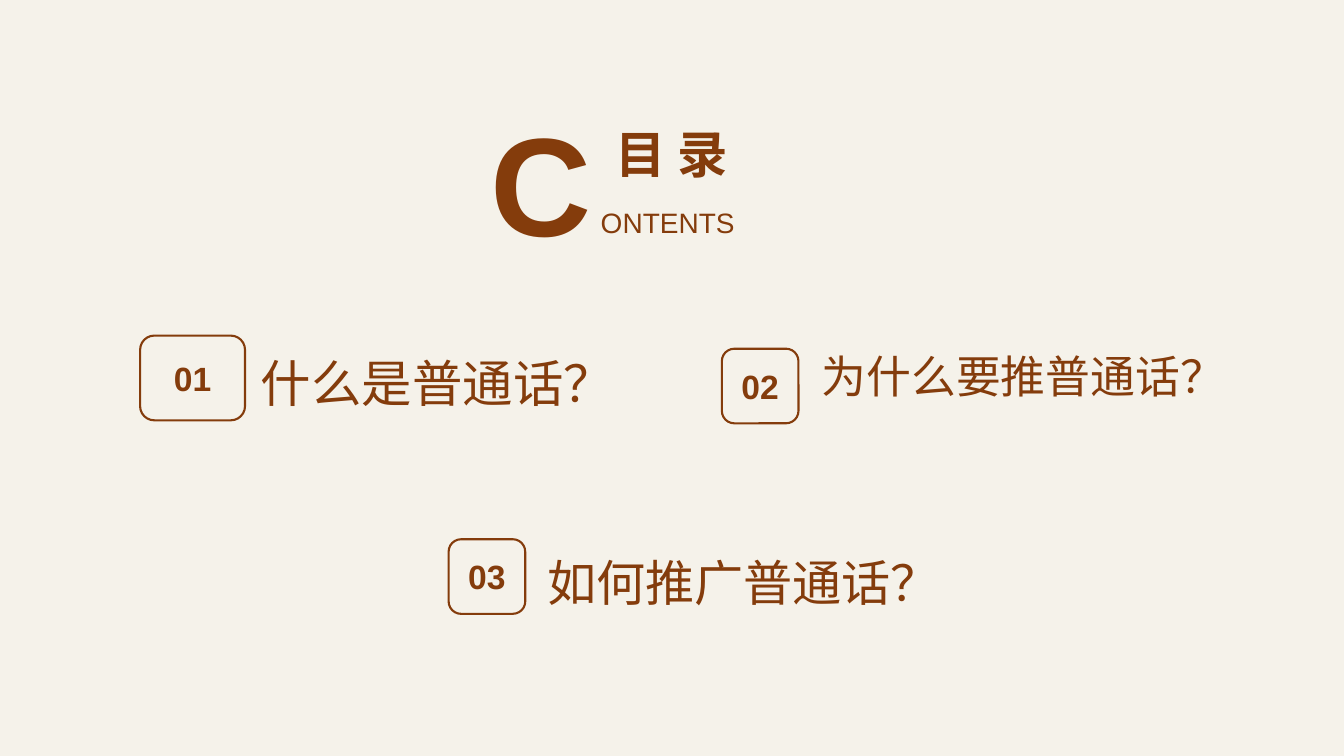
"""Build the contents slide of a talk on Putonghua."""
from dataclasses import dataclass

import lxml.etree
import pptx
import pptx.dml.color
import pptx.enum.shapes
import pptx.enum.text
import pptx.oxml.ns
import pptx.slide
import pptx.text.text
import pptx.util

Inches = pptx.util.Inches
Align = pptx.enum.text.PP_ALIGN
Anchor = pptx.enum.text.MSO_ANCHOR

BROWN = "843C0C"
CREAM = "F5F2EA"
LATIN = "Arial"
CHINESE = "Noto Sans CJK JP"
Box = tuple[float, float, float, float]


@dataclass(frozen=True)
class Label:
    text: str
    box: Box
    size: float
    font: str = LATIN
    bold: bool = False
    align: Align = Align.LEFT
    anchor: Anchor = Anchor.BOTTOM
    inset: tuple[float, float, float, float] = (0.1, 0.05, 0.1, 0.05)
    grows: bool = False


@dataclass(frozen=True)
class Topic:
    number: str
    badge: Box
    title: Label


HEADING = (
    Label("C", (3.83, 0.76, 2.04, 2.07), 100, bold=True, align=Align.RIGHT,
          anchor=Anchor.MIDDLE, inset=(0, 0, 0, 0)),
    Label("ONTENTS", (5.86, 1.99, 1.75, 0.44), 20, align=Align.JUSTIFY,
          anchor=Anchor.TOP, grows=True),
    Label("目 录", (5.79, 1.1, 1.75, 0.77), 36, bold=True, align=Align.CENTER),
)

TOPICS = (
    Topic("01", (1.39, 3.33, 1.04, 0.84),
          Label("什么是普通话？", (2.49, 3.36, 3.98, 0.78), 36, CHINESE)),
    Topic("02", (7.16, 3.46, 0.76, 0.74),
          Label("为什么要推普通话？", (8.05, 3.66, 4.69, 0.78), 32, CHINESE,
                inset=(0.1, 0.05, 0.1, 0.45))),
    Topic("03", (4.45, 5.35, 0.76, 0.74),
          Label("如何推广普通话？", (5.33, 5.33, 4.35, 0.78), 35.1, CHINESE)),
)


def color(value: str) -> pptx.dml.color.RGBColor:
    return pptx.dml.color.RGBColor.from_string(value)


def write(frame: pptx.text.text.TextFrame, label: Label) -> None:
    frame.word_wrap = True
    frame.vertical_anchor = label.anchor
    if label.grows:
        frame.auto_size = pptx.enum.text.MSO_AUTO_SIZE.SHAPE_TO_FIT_TEXT
    (frame.margin_left, frame.margin_top,
     frame.margin_right, frame.margin_bottom) = map(Inches, label.inset)
    paragraph = frame.paragraphs[0]
    paragraph.text = label.text
    paragraph.alignment = label.align
    paragraph.font.size = pptx.util.Pt(label.size)
    paragraph.font.bold = label.bold
    paragraph.font.color.rgb = color(BROWN)
    paragraph.font.name = label.font
    if label.font == CHINESE:
        qn = pptx.oxml.ns.qn
        defaults = paragraph._p.pPr.find(qn("a:defRPr"))
        lxml.etree.SubElement(defaults, qn("a:ea"), typeface=CHINESE)


def add_label(slide: pptx.slide.Slide, label: Label) -> None:
    write(slide.shapes.add_textbox(*map(Inches, label.box)).text_frame, label)


def add_topic(slide: pptx.slide.Slide, topic: Topic) -> None:
    badge = slide.shapes.add_shape(
        pptx.enum.shapes.MSO_SHAPE.ROUNDED_RECTANGLE, *map(Inches, topic.badge))
    badge.shadow.inherit = False
    badge.fill.background()
    badge.line.color.rgb = color(BROWN)
    badge.line.width = pptx.util.Pt(1.5)
    write(badge.text_frame, Label(topic.number, topic.badge, 24, bold=True,
                                  align=Align.CENTER, anchor=Anchor.MIDDLE))
    add_label(slide, topic.title)


def main() -> None:
    deck = pptx.Presentation()
    deck.slide_width, deck.slide_height = Inches(13.33), Inches(7.5)
    slide = deck.slides.add_slide(deck.slide_layouts[6])
    slide.background.fill.solid()
    slide.background.fill.fore_color.rgb = color(CREAM)
    for topic in TOPICS:
        add_topic(slide, topic)
    for label in HEADING:
        add_label(slide, label)
    deck.save("out.pptx")


if __name__ == "__main__":
    main()
